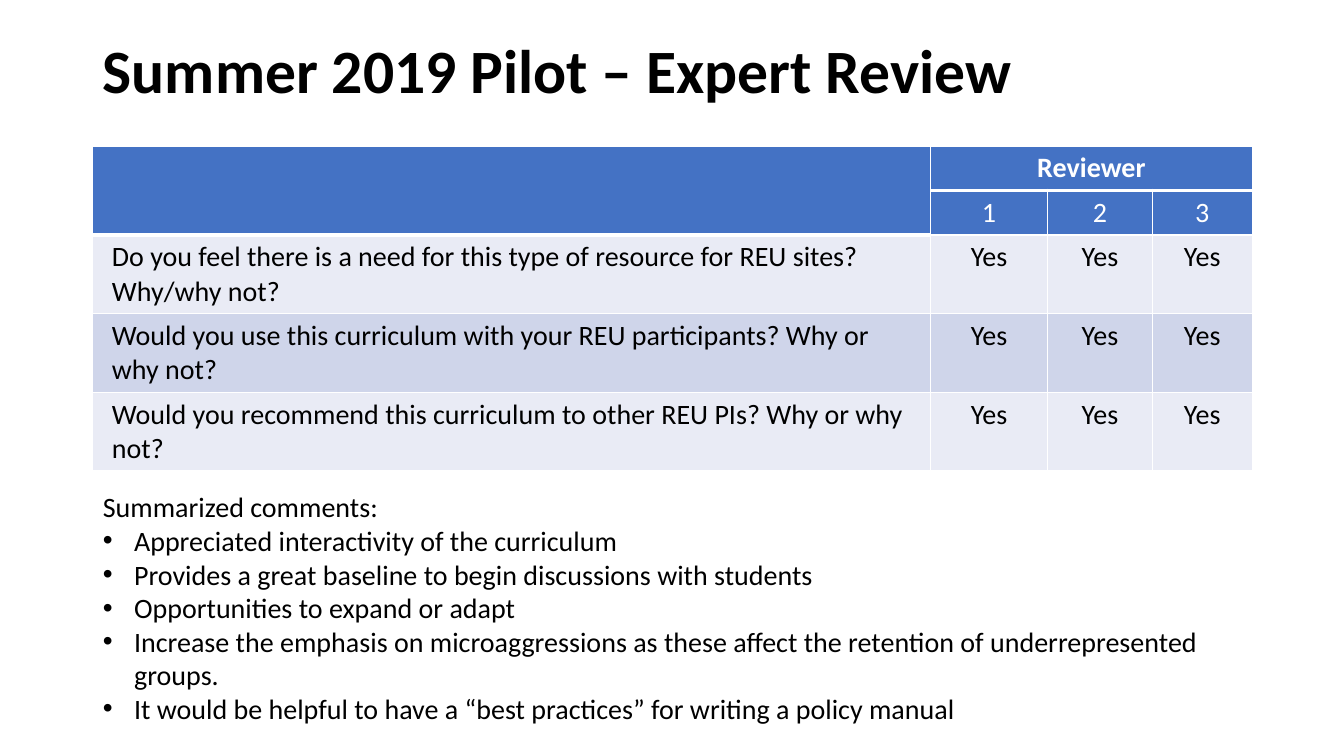
from lxml.etree import SubElement
from pptx import Presentation
from pptx.dml.color import RGBColor
from pptx.enum.text import MSO_ANCHOR as Anchor, MSO_AUTO_SIZE as AutoSize, PP_ALIGN as Align
from pptx.oxml.ns import qn
from pptx.util import Inches, Pt

WIDTH, HEIGHT = 13.33, 7.5
MARGIN, CONTENT_WIDTH = 0.92, 11.5
TITLE_HEIGHT = 1.45
COMMENTS_TOP, COMMENTS_HEIGHT = 4.81, 3.47
COLUMN_WIDTHS = [8.31, 1.16, 1.04, 0.99]
HEADER_ROWS, HEADER_HEIGHT, QUESTION_HEIGHT = 2, 0.43, 0.78
BULLET_INDENT = 0.31
FONT = "Calibri"
BLACK, WHITE, BLUE = "000000", "FFFFFF", "4472C4"
BANDS = ["E9EBF5", "CFD5EA"]

REVIEWS = [
    ["", "Reviewer", "", ""],
    ["", "1", "2", "3"],
    ["Do you feel there is a need for this type of resource for REU sites? Why/why not?"]
    + ["Yes"] * 3,
    ["Would you use this curriculum with your REU participants? Why or why not?"]
    + ["Yes"] * 3,
    ["Would you recommend this curriculum to other REU PIs? Why or why not?"]
    + ["Yes"] * 3,
]
COMMENTS = [
    "Appreciated interactivity of the curriculum",
    "Provides a great baseline to begin discussions with students",
    "Opportunities to expand or adapt",
    "Increase the emphasis on microaggressions as these affect the retention of "
    "underrepresented groups.",
    "It would be helpful to have a “best practices” for writing a policy manual",
]


def color(hex_code):
    return RGBColor.from_string(hex_code)


def format_paragraph(paragraph, size=20, hex_code=BLACK, bold=False, align=Align.LEFT):
    paragraph.alignment = align
    font = paragraph.font
    font.name, font.size, font.bold = FONT, Pt(size), bold
    font.color.rgb = color(hex_code)


def place(shape, top, height):
    """Put a shape in the content column."""
    shape.left, shape.top = Inches(MARGIN), Inches(top)
    shape.width, shape.height = Inches(CONTENT_WIDTH), Inches(height)


def set_bullet(paragraph, bulleted):
    properties = paragraph._p.get_or_add_pPr()
    indent = Inches(BULLET_INDENT) if bulleted else 0
    properties.set("marL", str(indent))
    properties.set("indent", str(-indent))
    if bulleted:
        SubElement(properties, qn("a:buFont"), typeface="Arial")
        SubElement(properties, qn("a:buChar"), char="•")
    else:
        SubElement(properties, qn("a:buNone"))


def set_borders(cell, bottom_width):
    """Draw white cell borders; they must precede the fill in the XML."""
    properties = cell._tc.get_or_add_tcPr()
    widths = {"lnL": 1, "lnR": 1, "lnT": 1, "lnB": bottom_width}
    for side, width in widths.items():
        line = SubElement(properties, qn(f"a:{side}"), w=str(Pt(width)))
        fill = SubElement(line, qn("a:solidFill"))
        SubElement(fill, qn("a:srgbClr"), val=WHITE)


def fill_title(title, text):
    place(title, 0, TITLE_HEIGHT)
    frame = title.text_frame
    frame.text = text
    frame.vertical_anchor = Anchor.MIDDLE
    paragraph = frame.paragraphs[0]
    paragraph.line_spacing = 0.9
    format_paragraph(paragraph, size=44, bold=True)


def format_cell(cell, text, row, column):
    is_header = row < HEADER_ROWS
    set_borders(cell, 3 if row == 0 else 1)
    cell.fill.solid()
    cell.fill.fore_color.rgb = color(BLUE if is_header else BANDS[(row - HEADER_ROWS) % 2])
    cell.margin_left = cell.margin_right = Inches(0.19)
    cell.text = text
    format_paragraph(
        cell.text_frame.paragraphs[0],
        hex_code=WHITE if is_header else BLACK,
        bold=row == 0,
        align=Align.CENTER if column else Align.LEFT,
    )


def add_review_table(slide):
    row_heights = [HEADER_HEIGHT] * HEADER_ROWS
    row_heights += [QUESTION_HEIGHT] * (len(REVIEWS) - HEADER_ROWS)
    table = slide.shapes.add_table(
        len(REVIEWS), len(COLUMN_WIDTHS), Inches(MARGIN), Inches(TITLE_HEIGHT),
        Inches(CONTENT_WIDTH), Inches(sum(row_heights)),
    ).table
    for column, width in zip(table.columns, COLUMN_WIDTHS):
        column.width = Inches(width)
    for row, height in zip(table.rows, row_heights):
        row.height = Inches(height)
    for row, texts in enumerate(REVIEWS):
        for column, text in enumerate(texts):
            format_cell(table.cell(row, column), text, row, column)
    table.cell(0, 0).merge(table.cell(1, 0))
    table.cell(0, 1).merge(table.cell(0, 3))


def fill_comments(body, heading, comments):
    place(body, COMMENTS_TOP, COMMENTS_HEIGHT)
    frame = body.text_frame
    frame.auto_size = AutoSize.NONE
    frame.vertical_anchor = Anchor.TOP
    frame.text = "\n".join([heading, *comments])
    for index, paragraph in enumerate(frame.paragraphs):
        set_bullet(paragraph, index > 0)
        paragraph.space_before = Pt(0)
        format_paragraph(paragraph)


def main():
    presentation = Presentation()
    presentation.slide_width, presentation.slide_height = Inches(WIDTH), Inches(HEIGHT)
    slide = presentation.slides.add_slide(presentation.slide_layouts[1])
    fill_title(slide.shapes.title, "Summer 2019 Pilot – Expert Review")
    add_review_table(slide)
    fill_comments(slide.placeholders[1], "Summarized comments:", COMMENTS)
    presentation.save("out.pptx")


if __name__ == "__main__":
    main()
